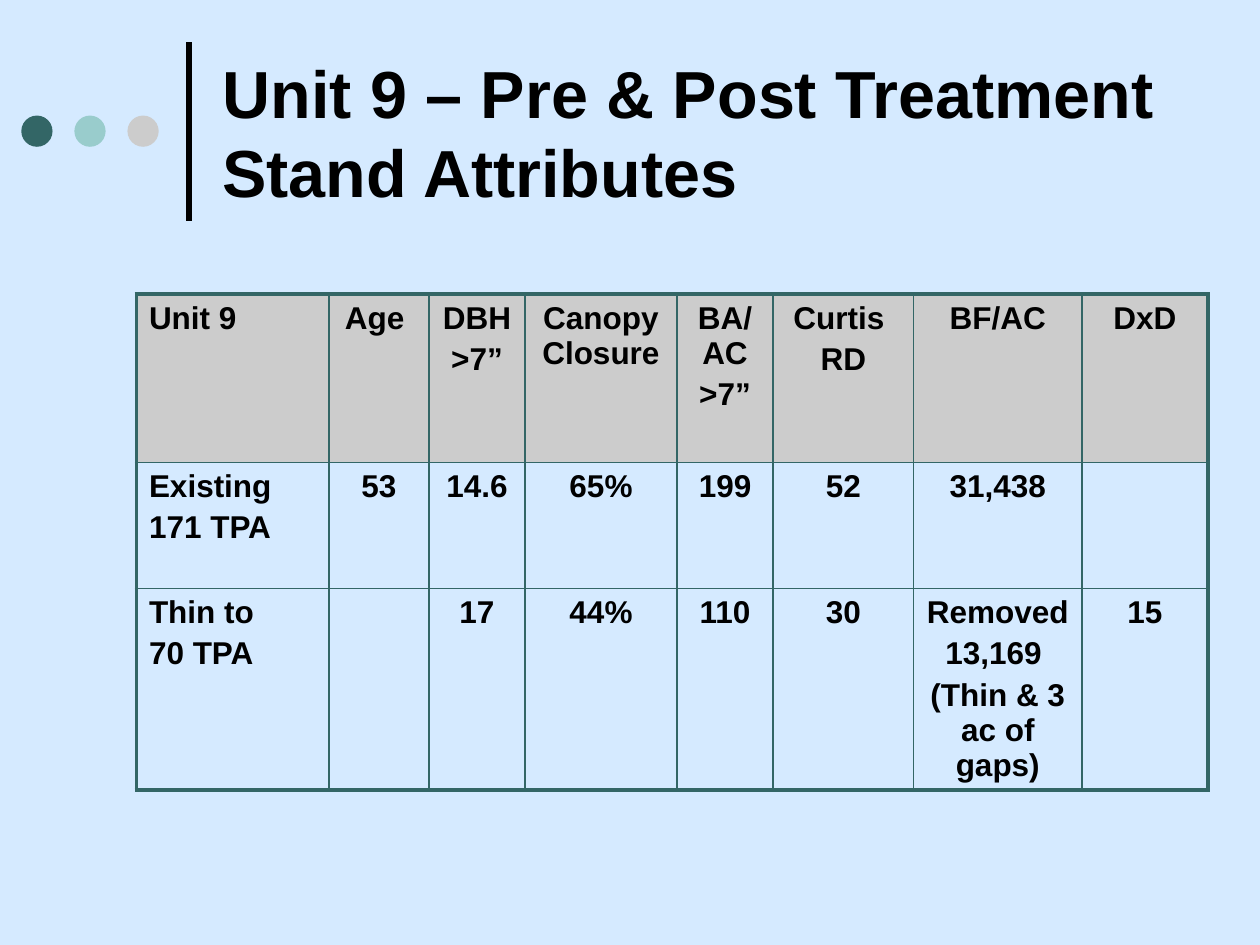
from dataclasses import dataclass

from lxml import etree
from pptx import Presentation
from pptx.dml.color import RGBColor
from pptx.enum.shapes import MSO_CONNECTOR, MSO_SHAPE
from pptx.enum.text import MSO_ANCHOR, MSO_AUTO_SIZE, PP_ALIGN
from pptx.oxml.ns import qn
from pptx.util import Cm, Pt

STRAIGHT = MSO_CONNECTOR.STRAIGHT
OVAL = MSO_SHAPE.OVAL
MIDDLE = MSO_ANCHOR.MIDDLE
NO_AUTOFIT = MSO_AUTO_SIZE.NONE
LEFT, CENTER = PP_ALIGN.LEFT, PP_ALIGN.CENTER
TITLE_ONLY = 5


@dataclass(frozen=True)
class Theme:
    font: str = "Arial"
    background: str = "D5EAFF"
    text: str = "000000"
    dark: str = "336666"
    light: str = "99CCCC"
    gray: str = "CCCCCC"
    title_size: float = 38
    table_size: float = 18
    paragraph_gap: float = 3.6
    rule_width: float = 3
    outer_border: float = 2.25
    inner_border: float = 1


class SlideBuilder:
    def __init__(self, slide, theme):
        self.slide = slide
        self.theme = theme
        self.fill(slide.background, theme.background)

    def fill(self, target, color):
        target.fill.solid()
        target.fill.fore_color.rgb = RGBColor.from_string(color)

    def style(self, paragraph, size, alignment):
        paragraph.alignment = alignment
        font = paragraph.font
        font.name, font.size, font.bold = self.theme.font, Pt(size), True
        font.color.rgb = RGBColor.from_string(self.theme.text)

    def title(self, text, left, top, width, height):
        shape = self.slide.shapes.title
        shape.left, shape.top = Cm(left), Cm(top)
        shape.width, shape.height = Cm(width), Cm(height)
        frame = shape.text_frame
        frame.text = text
        frame.word_wrap = True
        frame.auto_size = NO_AUTOFIT
        frame.vertical_anchor = MIDDLE
        self.style(frame.paragraphs[0], self.theme.title_size, LEFT)

    def rule(self, x, top, bottom):
        line = self.slide.shapes.add_connector(
            STRAIGHT, Cm(x), Cm(bottom), Cm(x), Cm(top))
        line.line.width = Pt(self.theme.rule_width)
        line.line.color.rgb = RGBColor.from_string(self.theme.text)
        etree.SubElement(line._element.spPr, qn("a:effectLst"))

    def dot(self, left, top, size, color):
        shape = self.slide.shapes.add_shape(
            OVAL, Cm(left), Cm(top), Cm(size), Cm(size))
        shape.shadow.inherit = False
        self.fill(shape, color)
        shape.line.fill.background()

    def borders(self, cell, widths):
        properties = cell._tc.get_or_add_tcPr()
        for side, width in widths.items():
            line = etree.SubElement(
                properties, qn(f"a:ln{side}"), w=str(Pt(width)))
            solid = etree.SubElement(line, qn("a:solidFill"))
            etree.SubElement(solid, qn("a:srgbClr"), val=self.theme.dark)

    def cell(self, cell, text, alignment):
        cell.text = text
        for index, paragraph in enumerate(cell.text_frame.paragraphs):
            self.style(paragraph, self.theme.table_size, alignment)
            if index:
                paragraph.space_before = Pt(self.theme.paragraph_gap)

    def table(self, rows, left, top, widths, heights):
        table = self.slide.shapes.add_table(
            len(heights), len(widths), Cm(left), Cm(top),
            Cm(sum(widths)), Cm(sum(heights))).table
        table.first_row = table.horz_banding = False
        for column, width in zip(table.columns, widths):
            column.width = Cm(width)
        for row, height in zip(table.rows, heights):
            row.height = Cm(height)

        last_row, last_column = len(heights) - 1, len(widths) - 1
        for r, texts in enumerate(rows):
            for c, text in enumerate(texts):
                cell = table.cell(r, c)
                self.cell(cell, text, CENTER if c else LEFT)
                on_edge = {"L": c == 0, "R": c == last_column,
                           "T": r == 0, "B": r == last_row}
                self.borders(cell, {
                    side: self.theme.outer_border if edge
                    else self.theme.inner_border
                    for side, edge in on_edge.items()})
                if r == 0:
                    self.fill(cell, self.theme.gray)
                else:
                    cell.fill.background()


STAND_ATTRIBUTES = [
    ["Unit 9", "Age ", "DBH\n>7”", "Canopy Closure", "BA/ AC\n>7”",
     "Curtis \nRD", "BF/AC", "DxD"],
    ["Existing\n171 TPA", "53", "14.6", "65%", "199", "52", "31,438", ""],
    ["Thin to\n70 TPA", "", "17", "44%", "110", "30",
     "Removed\n13,169 \n(Thin & 3 ac of gaps)", "15"],
]


def main():
    presentation = Presentation()
    presentation.slide_width, presentation.slide_height = Cm(25.4), Cm(19.05)
    theme = Theme()
    slide = presentation.slides.add_slide(
        presentation.slide_layouts[TITLE_ONLY])
    builder = SlideBuilder(slide, theme)

    # Rule and dots beside the title
    builder.rule(3.81, 0.84, 4.45)
    for index, color in enumerate((theme.dark, theme.light, theme.gray)):
        builder.dot(0.43 + 1.07 * index, 2.33, 0.63, color)

    # Title
    builder.title("Unit 9 – Pre & Post Treatment Stand Attributes",
                  4.23, 0.53, 19.48, 4.24)

    # Stand attributes before and after thinning
    builder.table(STAND_ATTRIBUTES, 2.75, 5.93,
                  widths=[3.88, 2.02, 1.93, 3.07, 1.93, 2.84, 3.39, 2.54],
                  heights=[3.39, 2.54, 4.06])

    presentation.save("out.pptx")


if __name__ == "__main__":
    main()
